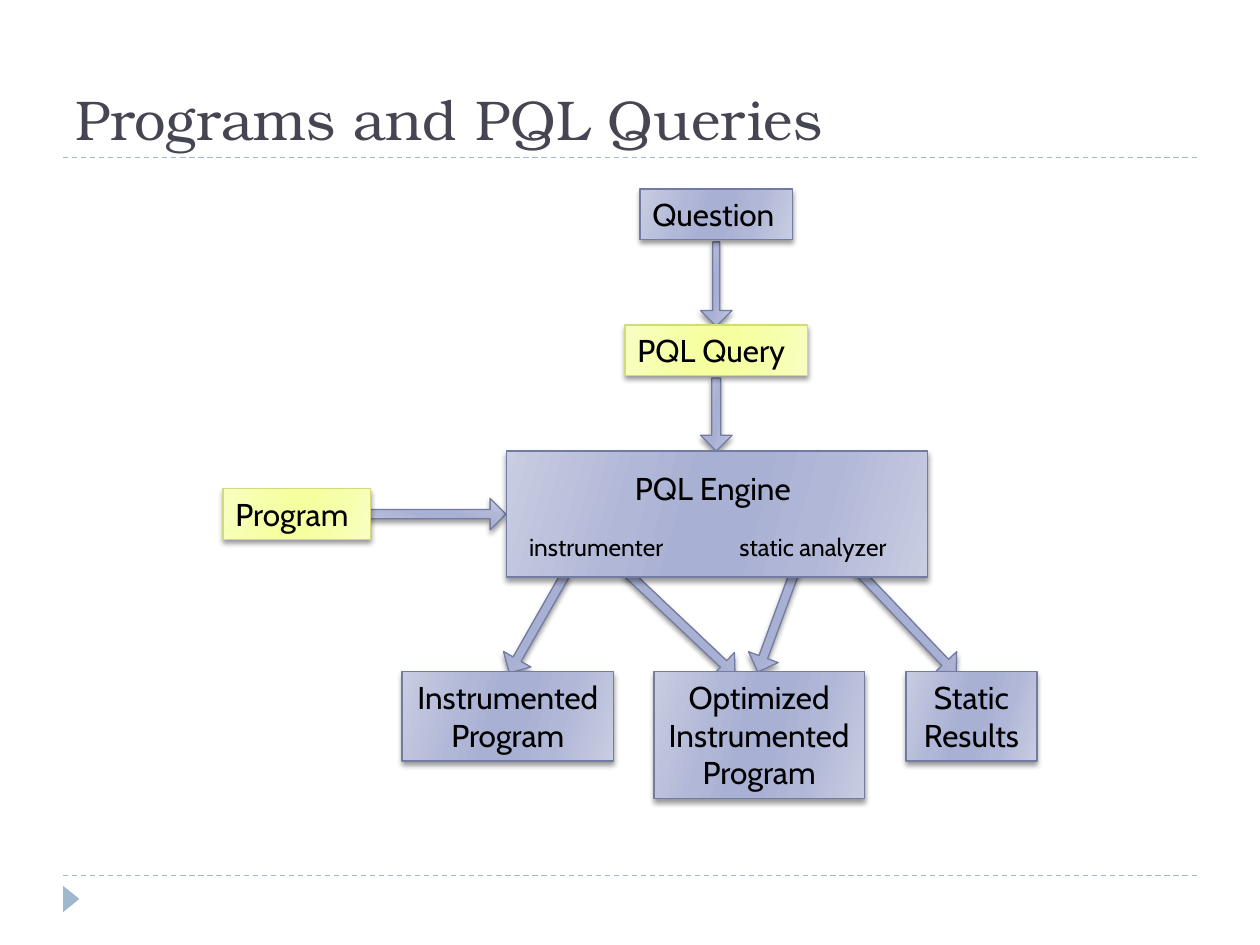
from lxml.etree import SubElement
from pptx import Presentation
from pptx.dml.color import RGBColor
from pptx.enum.dml import MSO_LINE
from pptx.enum.shapes import MSO_CONNECTOR, MSO_SHAPE
from pptx.enum.text import MSO_ANCHOR, MSO_AUTO_SIZE, PP_ALIGN
from pptx.oxml.ns import qn
from pptx.util import Inches, Pt

INK = RGBColor(0x46, 0x46, 0x53)
BLACK = RGBColor(0x00, 0x00, 0x00)
MIST = RGBColor(0x9F, 0xB8, 0xCD)
BLUE_EDGE = RGBColor(0x72, 0x7C, 0xA3)
BLUE_OUTER = RGBColor(0xC9, 0xCD, 0xE2)
BLUE_MIDDLE = RGBColor(0xB1, 0xB7, 0xD7)
BLUE_CORE = RGBColor(0xA8, 0xB0, 0xD3)
LIME_EDGE = RGBColor(0xD2, 0xDA, 0x7A)
LIME_OUTER = RGBColor(0xF8, 0xFE, 0xC2)
LIME_MIDDLE = RGBColor(0xF6, 0xFF, 0xA7)
LIME_CORE = RGBColor(0xF6, 0xFF, 0x9F)
BLUE = (BLUE_EDGE, BLUE_OUTER, BLUE_MIDDLE, BLUE_CORE)
LIME = (LIME_EDGE, LIME_OUTER, LIME_MIDDLE, LIME_CORE)

deck = Presentation()
deck.slide_width, deck.slide_height = Inches(10), Inches(7.5)
# Grid of 100 columns by 75 rows
COL, ROW = deck.slide_width / 100, deck.slide_height / 75
slide = deck.slides.add_slide(deck.slide_layouts[6])
shapes = slide.shapes


def add_block(kind, left, top, width, height, palette):
    """A preset shape with a mirrored gradient, thin edge and soft shadow."""
    block = shapes.add_shape(kind, int(left * COL), int(top * ROW),
                             int(width * COL), int(height * ROW))
    edge, outer, middle, core = palette
    block.line.color.rgb = edge
    block.line.width = Pt(0.75)
    block.fill.gradient()
    block.fill.gradient_angle = 360 - 16
    properties = block._element.spPr
    stops = properties.find(".//" + qn("a:gsLst"))
    for stop in list(stops):
        stops.remove(stop)
    for share, color in ((0, outer), (30, middle), (45, core),
                         (55, core), (73, middle), (100, outer)):
        stop = SubElement(stops, qn("a:gs"), pos=str(share * 1000))
        SubElement(stop, qn("a:srgbClr"), val=str(color))
    block.shadow.inherit = False
    shadow = SubElement(properties.find(qn("a:effectLst")), qn("a:outerShdw"),
                        blurRad=str(Pt(3)), dist=str(Pt(2)),
                        dir="5400000", rotWithShape="0")
    shade = SubElement(shadow, qn("a:srgbClr"), val=str(BLACK))
    SubElement(shade, qn("a:alpha"), val="40000")
    return block


def write(holder, lines, size, font="Cabin", color=BLACK, wrap=False,
          anchor=MSO_ANCHOR.TOP, fit=MSO_AUTO_SIZE.SHAPE_TO_FIT_TEXT):
    """One paragraph per line; several lines are centred."""
    frame = holder.text_frame
    frame.word_wrap = wrap
    frame.auto_size = fit
    frame.vertical_anchor = anchor
    for number, line in enumerate(lines):
        paragraph = frame.paragraphs[0] if number == 0 else frame.add_paragraph()
        paragraph.alignment = PP_ALIGN.CENTER if len(lines) > 1 else PP_ALIGN.LEFT
        run = paragraph.add_run()
        run.text = line
        run.font.size = Pt(size)
        run.font.name = font
        run.font.color.rgb = color


# Dashed rules and the corner marker
for rule_row in (69.5, 12.5):
    rule = shapes.add_connector(MSO_CONNECTOR.STRAIGHT, int(5 * COL), int(rule_row * ROW),
                                int(95 * COL), int(rule_row * ROW))
    rule.line.color.rgb = MIST
    rule.line.width = Pt(0.75)
    rule.line.dash_style = MSO_LINE.DASH
    SubElement(rule._element.spPr, qn("a:effectLst"))

marker = shapes.add_shape(MSO_SHAPE.ISOSCELES_TRIANGLE, int(4.6 * COL), int(70.7 * ROW),
                          int(2.1 * COL), int(1.3 * ROW))
marker.rotation = 90
marker.shadow.inherit = False
marker.fill.solid()
marker.fill.fore_color.rgb = MIST
marker.line.fill.background()

# Title
title = shapes.add_textbox(int(5 * COL), int(1.7 * ROW), int(90 * COL), int(10.8 * ROW))
write(title, ["Programs and PQL Queries"], 32, "TeX Gyre Bonum", INK, True,
      MSO_ANCHOR.BOTTOM, MSO_AUTO_SIZE.NONE)

# Arrows: left, top, length, turn, shaft share
for left, top, length, turn, shaft in (
    (55.6, 19.2, 6.7, 0, 0.22),      # question to query
    (55.6, 30, 5.8, 0, 0.29),        # query to engine
    (33.5, 35.4, 10.8, 270, 0.29),   # program to engine
    (41.4, 45, 9, 29.7, 0.29),       # instrumenter to instrumented
    (70.6, 43.4, 11.7, 316.4, 0.29), # analyzer to static results
    (52.8, 43.6, 11.8, 313.4, 0.29), # instrumenter to optimized
    (60.4, 44.9, 8.7, 20.2, 0.29),   # analyzer to optimized
):
    arrow = add_block(MSO_SHAPE.DOWN_ARROW, left, top, 2.5, length, BLUE)
    arrow.adjustments[0] = shaft
    arrow.adjustments[1] = 0.5
    arrow.rotation = turn

# Inputs and outputs
for left, top, width, height, palette, lines in (
    (50.8, 15, 12.1, 4, BLUE, ["Question"]),
    (49.6, 25.8, 14.5, 4, LIME, ["PQL Query"]),
    (17.7, 38.8, 11.7, 4, LIME, ["Program"]),
    (31.9, 53.3, 16.8, 7.1, BLUE, ["Instrumented", "Program"]),
    (51.9, 53.3, 16.7, 10.1, BLUE, ["Optimized", "Instrumented", "Program"]),
    (71.9, 53.3, 10.4, 7.1, BLUE, ["Static", "Results"]),
):
    write(add_block(MSO_SHAPE.RECTANGLE, left, top, width, height, palette), lines, 18)

# Engine and the names of its parts
add_block(MSO_SHAPE.RECTANGLE, 40.2, 35.8, 33.4, 10, BLUE)
for left, top, width, height, name, size, wrap in (
    (41, 41.7, 12.9, 3.4, "instrumenter", 14, False),
    (57.7, 41.7, 15, 3.4, "static analyzer", 14, True),
    (49.4, 36.7, 15.5, 4, "PQL Engine", 18, False),
):
    label = shapes.add_textbox(int(left * COL), int(top * ROW),
                               int(width * COL), int(height * ROW))
    write(label, [name], size, wrap=wrap)

deck.save("out.pptx")
